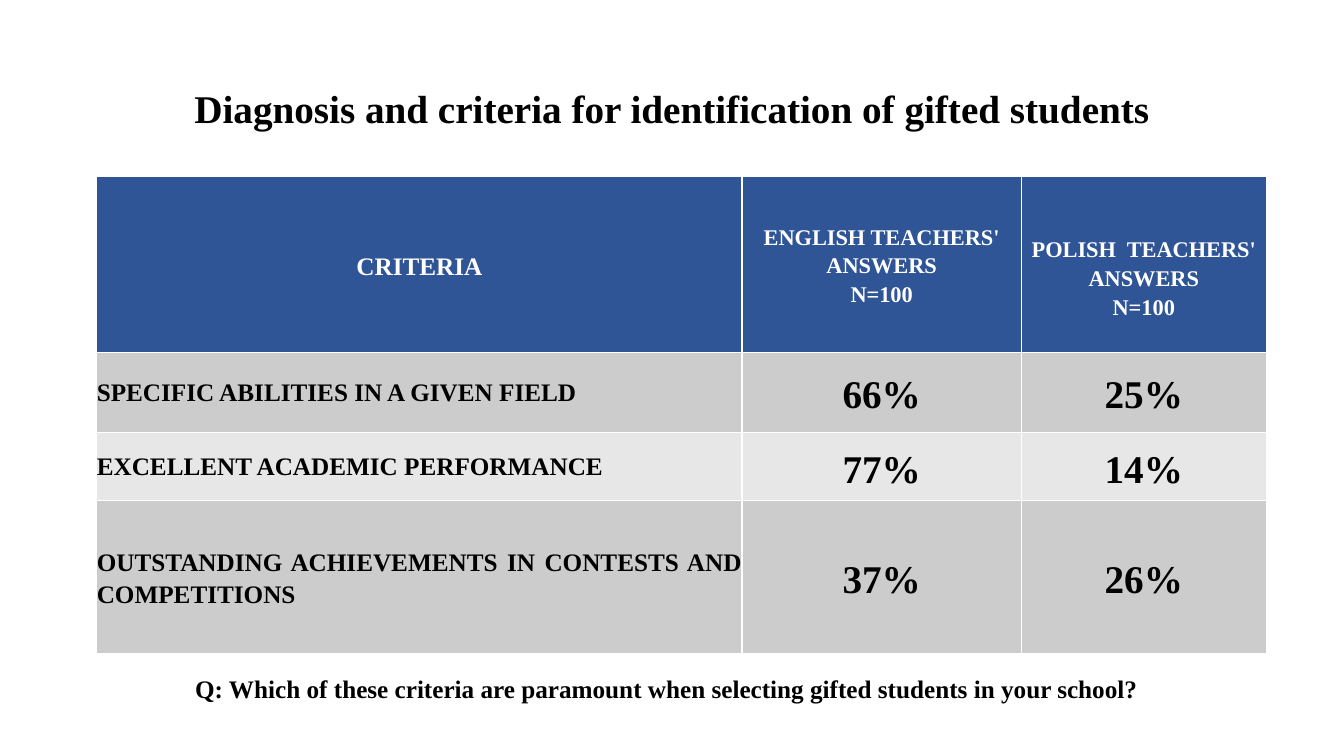
import pptx
import pptx.util
import pptx.dml.color
import pptx.enum.text
from dataclasses import dataclass

Cm = pptx.util.Cm
Pt = pptx.util.Pt
Align = pptx.enum.text.PP_ALIGN
Anchor = pptx.enum.text.MSO_ANCHOR


@dataclass(frozen=True)
class Theme:
    font: str = "Times New Roman"
    ink: str = "000000"
    header_ink: str = "FFFFFF"
    header_fill: str = "2F5597"
    bands: tuple = ("CCCCCC", "E7E7E7")
    large: int = 28
    medium: int = 18
    small: int = 16


THEME = Theme()
COLUMN_WIDTHS = (16.26, 7.04, 6.17)
ROW_HEIGHTS = (4.43, 2.02, 1.71, 3.86)
HEADERS = (
    "CRITERIA",
    "ENGLISH TEACHERS' ANSWERS\nN=100",
    "POLISH  TEACHERS' ANSWERS\nN=100",
)
ANSWERS = (
    ("SPECIFIC ABILITIES IN A GIVEN FIELD", "66%", "25%"),
    ("EXCELLENT ACADEMIC PERFORMANCE", "77%", "14%"),
    ("OUTSTANDING ACHIEVEMENTS IN CONTESTS AND COMPETITIONS", "37%", "26%"),
)


def rgb(value):
    return pptx.dml.color.RGBColor.from_string(value)


def write_text(frame, text, size, color, alignment, spacing):
    frame.text = text
    for paragraph in frame.paragraphs:
        paragraph.alignment = alignment
        paragraph.line_spacing = spacing
        paragraph.font.name = THEME.font
        paragraph.font.size = Pt(size)
        paragraph.font.bold = True
        paragraph.font.color.rgb = rgb(color)


def add_caption(slide, box, text, size, alignment, anchor, spacing):
    shape = slide.shapes.add_textbox(*map(Cm, box))
    shape.text_frame.word_wrap = True
    shape.text_frame.vertical_anchor = anchor
    write_text(shape.text_frame, text, size, THEME.ink, alignment, spacing)


def fill_cell(cell, text, fill, size, color, alignment, spacing=1.15):
    cell.margin_left = cell.margin_right = cell.margin_top = cell.margin_bottom = 0
    cell.vertical_anchor = Anchor.MIDDLE
    cell.fill.solid()
    cell.fill.fore_color.rgb = rgb(fill)
    write_text(cell.text_frame, text, size, color, alignment, spacing)


def add_answer_table(slide, left, top):
    box = (left, top, sum(COLUMN_WIDTHS), sum(ROW_HEIGHTS))
    table = slide.shapes.add_table(
        len(ROW_HEIGHTS), len(COLUMN_WIDTHS), *map(Cm, box)).table
    for column, width in zip(table.columns, COLUMN_WIDTHS):
        column.width = Cm(width)
    for row, height in zip(table.rows, ROW_HEIGHTS):
        row.height = Cm(height)

    # Header row; the last heading hangs from the top of its cell
    for index, heading in enumerate(HEADERS):
        size = THEME.small if index else THEME.medium
        fill_cell(table.cell(0, index), heading, THEME.header_fill, size,
                  THEME.header_ink, Align.CENTER)
    polish_heading = table.cell(0, 2)
    polish_heading.vertical_anchor = Anchor.TOP
    polish_heading.margin_top = Cm(1.45)

    # Banded answer rows; only the criterion that wraps is justified
    for row, (criterion, *shares) in enumerate(ANSWERS, start=1):
        fill = THEME.bands[(row - 1) % 2]
        wraps = row == len(ANSWERS)
        fill_cell(table.cell(row, 0), criterion, fill, THEME.medium, THEME.ink,
                  Align.JUSTIFY if wraps else Align.LEFT, 1.15 if wraps else 1.0)
        for column, share in enumerate(shares, start=1):
            fill_cell(table.cell(row, column), share, fill, THEME.large,
                      THEME.ink, Align.CENTER)


def main():
    presentation = pptx.Presentation()
    presentation.slide_width = Cm(33.87)
    presentation.slide_height = Cm(19.05)
    slide = presentation.slides.add_slide(presentation.slide_layouts[6])

    # Title
    add_caption(slide, (3.81, 1.27, 26.24, 3.02),
                "Diagnosis and criteria for identification of gifted students",
                THEME.large, Align.CENTER, Anchor.MIDDLE, 0.9)
    # Answers by country
    add_answer_table(slide, 2.44, 4.45)
    # Survey question
    add_caption(slide, (4.67, 16.84, 25.17, 1.02),
                "Q: Which of these criteria are paramount when selecting "
                "gifted students in your school?",
                THEME.medium, Align.LEFT, Anchor.TOP, 1.0)

    presentation.save("out.pptx")


if __name__ == "__main__":
    main()
